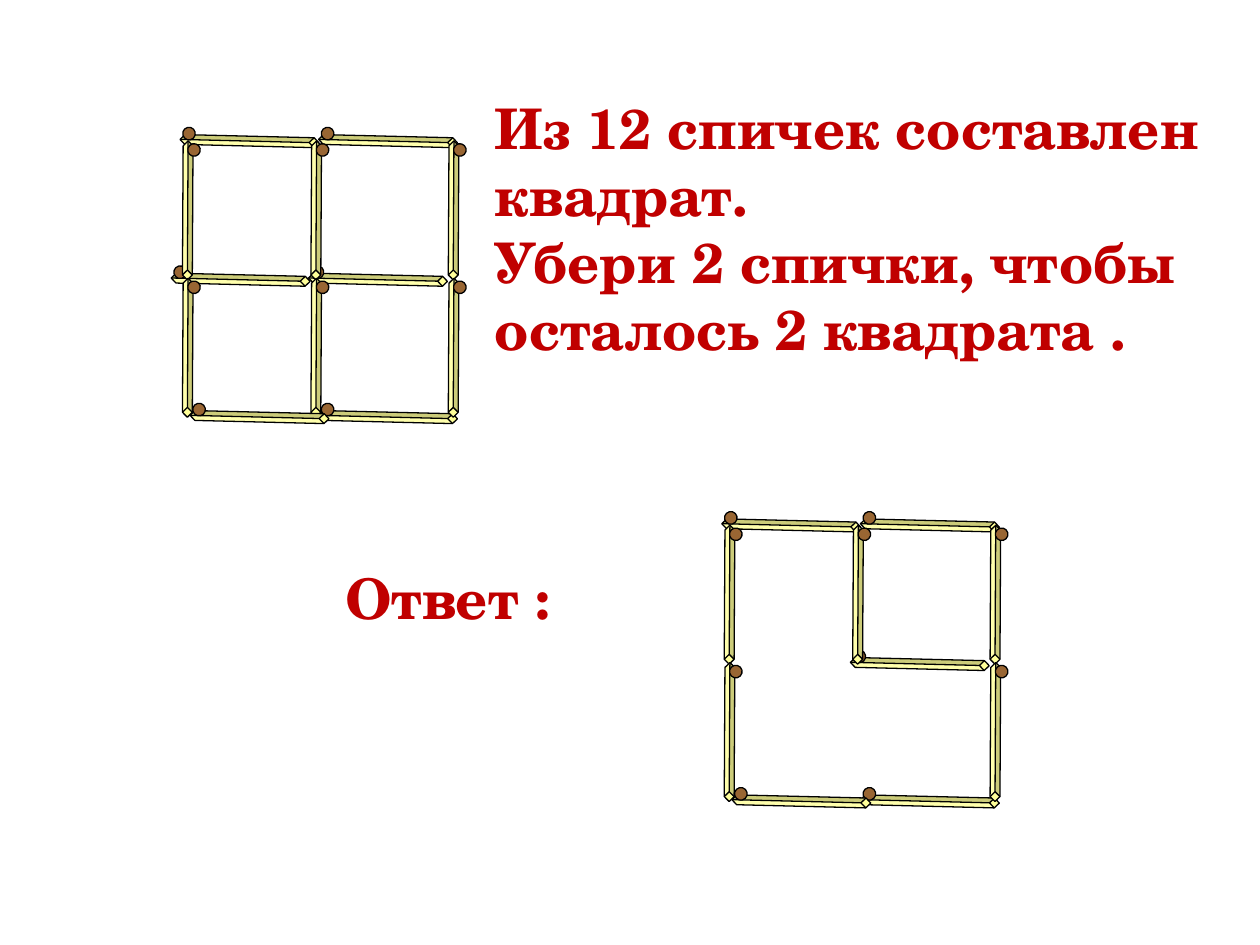
"""Builds a matchstick puzzle slide: the square of 12 matches and its answer."""
from pptx import Presentation
from pptx.dml.color import RGBColor
from pptx.enum.shapes import MSO_SHAPE as Shape
from pptx.util import Inches, Pt

COLORS = {"background": "FFFFFF", "text": "C00000", "stick": "FFFF99",
          "head": "996633", "outline": "000000"}
STICK_SIZE, HEAD_SIZE = 0.78, 0.1
ACROSS = {"rotation": 226.4, "head": (-0.14, 0.28)}
DOWN = {"rotation": 315.3, "head": (0.39, -0.14)}


def add_text(slide, paragraphs, left, top, width, height, size=32,
             font="TeX Gyre Schola", color="text", bold=True):
    frame = slide.shapes.add_textbox(
        Inches(left), Inches(top), Inches(width), Inches(height)).text_frame
    frame.word_wrap = True
    frame.text = "\n".join(paragraphs)
    for paragraph in frame.paragraphs:
        paragraph.font.size = Pt(size)
        paragraph.font.name = font
        paragraph.font.bold = bold
        paragraph.font.color.rgb = RGBColor.from_string(COLORS[color])


def add_match(slide, left, top, direction):
    match = slide.shapes.add_group_shape()
    head_dx, head_dy = direction["head"]
    for kind, x, y, size, color in (
            (Shape.CUBE, left, top, STICK_SIZE, "stick"),
            (Shape.OVAL, left + head_dx, top + head_dy, HEAD_SIZE, "head")):
        part = match.shapes.add_shape(
            kind, Inches(x), Inches(y), Inches(size), Inches(size))
        part.rotation = direction["rotation"]
        part.shadow.inherit = False
        part.fill.solid()
        part.fill.fore_color.rgb = RGBColor.from_string(COLORS[color])
        part.line.color.rgb = RGBColor.from_string(COLORS["outline"])
        part.line.width = Pt(0.75)
        if kind == Shape.CUBE:
            part.adjustments[0] = 0.929


prs = Presentation()
prs.slide_width, prs.slide_height = Inches(10), Inches(7.5)
slide = prs.slides.add_slide(prs.slide_layouts[6])
slide.background.fill.solid()
slide.background.fill.fore_color.rgb = RGBColor.from_string(COLORS["background"])

add_text(slide, ["Из 12 спичек составлен квадрат.",
                 "Убери 2 спички, чтобы осталось 2 квадрата ."],
         left=3.83, top=0.69, width=5.82, height=2.26)
add_text(slide, ["Ответ :"], left=2.64, top=4.42, width=2.76, height=0.64)

middle_left = (1.52, 1.83, ACROSS)
bottom_center = (2.12, 2.37, DOWN)
square = [(1.59, 0.73, ACROSS), (2.69, 0.73, ACROSS),
          (2.61, 1.83, ACROSS), middle_left, (2.69, 2.92, ACROSS)]
square += [(x, y, DOWN) for y in (1.28, 2.37) for x in (1.1, 2.12, 3.21)]
square.append((1.67, 2.92, ACROSS))
answer = [match for match in square if match not in (middle_left, bottom_center)]

for matches, dx, dy in ((square, 0, 0), (answer, 4.3, 3.05)):
    for left, top, direction in matches:
        add_match(slide, left + dx, top + dy, direction)

prs.save("out.pptx")
